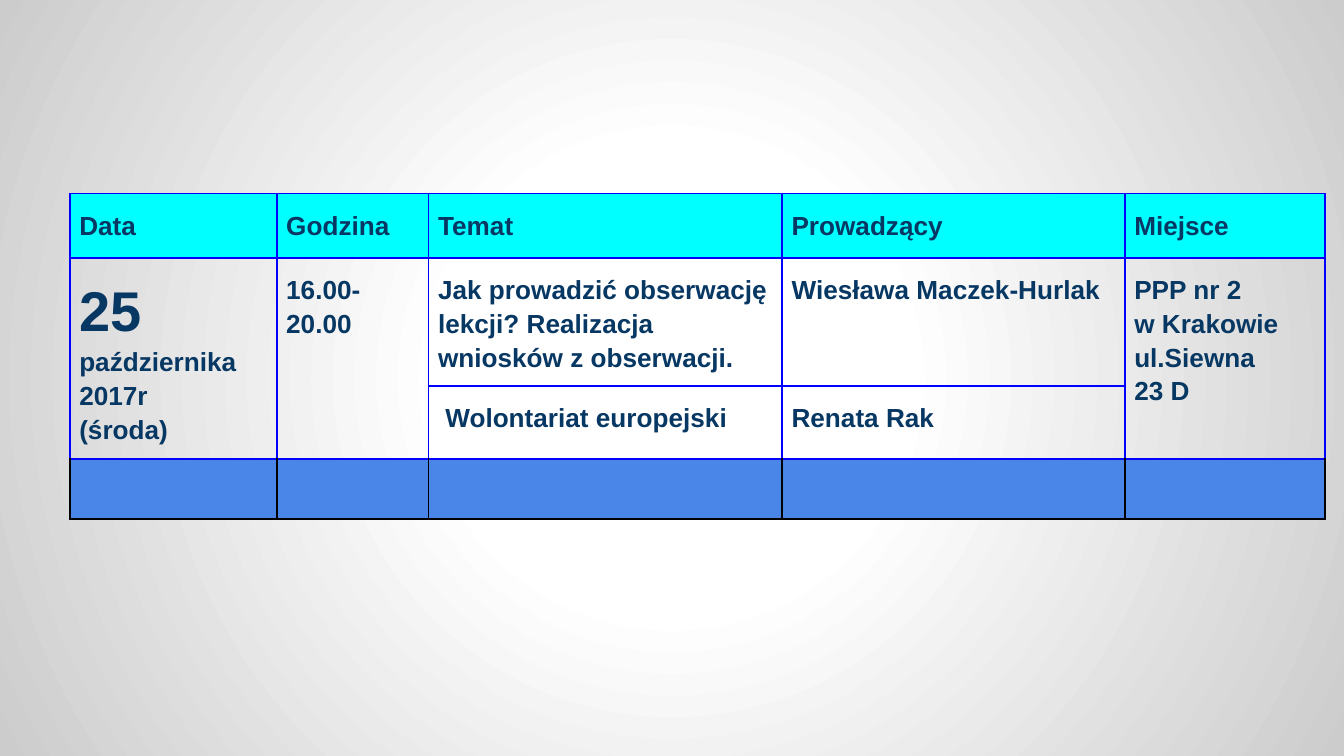
from lxml import etree
from pptx import Presentation
from pptx.dml.color import RGBColor
from pptx.oxml import parse_xml
from pptx.oxml.ns import nsdecls, qn
from pptx.util import Inches, Pt

NAVY = RGBColor(0x07, 0x37, 0x63)
CYAN = RGBColor(0x00, 0xFF, 0xFF)
BLUE = RGBColor(0x4A, 0x86, 0xE8)
LINE_BLUE = RGBColor(0x00, 0x00, 0xFF)
BLACK = RGBColor(0x00, 0x00, 0x00)
WHITE = RGBColor(0xFF, 0xFF, 0xFF)
GREY = RGBColor(0xCC, 0xCC, 0xCC)

COLS = [1.54, 1.13, 2.63, 2.55, 1.49]
ROWS = [0.48, 0.95, 0.54, 0.45]
HEADERS = ["Data", "Godzina", "Temat", "Prowadzący", "Miejsce"]
# Each cell is a list of paragraphs, each paragraph a list of (text, size) runs.
SESSION = [
    [[("25 ", 30), ("października 2017r", 14)], [("(środa)", 14)]],
    [[("16.00-", 14)], [("20.00", 14)]],
    [[("Jak prowadzić obserwację lekcji? Realizacja wniosków z obserwacji.", 14)]],
    [[("Wiesława Maczek-Hurlak", 14)]],
    [[("PPP nr 2", 14)], [("w Krakowie", 14)], [("ul.Siewna", 14)], [("23 D", 14)]],
]
SECOND_TOPIC = {2: " Wolontariat europejski", 3: "Renata Rak"}
MERGED_COLS = (0, 1, 4)


def set_background(s):
    """Radial gradient, white in the centre and grey at the edges."""
    s.background.fill.gradient()
    old = s.element.find(".//" + qn("a:gradFill"))
    stops = "".join(
        f'<a:gs pos="{pos * 1000}"><a:srgbClr val="{color}"/></a:gs>'
        for pos, color in [(0, WHITE), (30, WHITE), (100, GREY)])
    old.getparent().replace(old, parse_xml(
        f'<a:gradFill {nsdecls("a")} rotWithShape="1"><a:gsLst>{stops}</a:gsLst>'
        '<a:path path="circle"><a:fillToRect l="50000" t="50000" r="50000" b="50000"/>'
        '</a:path></a:gradFill>'))


def set_borders(cell, color=LINE_BLUE, top=LINE_BLUE, width=1):
    tc_pr = cell._tc.get_or_add_tcPr()
    for i, side in enumerate("LRTB"):
        ln = etree.Element(qn(f"a:ln{side}"), w=str(Pt(width)))
        fill = etree.SubElement(ln, qn("a:solidFill"))
        etree.SubElement(fill, qn("a:srgbClr"), val=str(top if side == "T" else color))
        tc_pr.insert(i, ln)


def set_text(cell, paragraphs, font="Arial", color=NAVY, bold=True, spacing=1.15):
    cell.margin_left = cell.margin_right = Inches(0.07)
    cell.margin_top = cell.margin_bottom = Inches(0.1)
    tf = cell.text_frame
    for i, runs in enumerate(paragraphs):
        p = tf.paragraphs[0] if i == 0 else tf.add_paragraph()
        p.line_spacing = spacing
        for text, size in runs:
            r = p.add_run()
            r.text = text
            r.font.name = font
            r.font.size = Pt(size)
            r.font.bold = bold
            r.font.color.rgb = color


def add_schedule(s, left, top):
    frame = s.shapes.add_table(len(ROWS), len(COLS), Inches(left), Inches(top),
                               Inches(sum(COLS)), Inches(sum(ROWS)))
    table = frame.table
    table.first_row = table.horz_banding = False
    for col, width in zip(table.columns, COLS):
        col.width = Inches(width)
    for row, height in zip(table.rows, ROWS):
        row.height = Inches(height)

    fills = [CYAN, None, None, BLUE]
    for y, color in enumerate(fills):
        for x in range(len(COLS)):
            cell = table.cell(y, x)
            if color is None:
                cell.fill.background()
            else:
                cell.fill.solid()
                cell.fill.fore_color.rgb = color
            set_borders(cell, BLACK if color == BLUE else LINE_BLUE)

    for x in MERGED_COLS:
        table.cell(1, x).merge(table.cell(2, x))
    for x, (header, paragraphs) in enumerate(zip(HEADERS, SESSION)):
        set_text(table.cell(0, x), [[(header, 14)]])
        set_text(table.cell(1, x), paragraphs)
    for x, text in SECOND_TOPIC.items():
        set_text(table.cell(2, x), [[(text, 14)]])


def main():
    prs = Presentation()
    prs.slide_width = Inches(10)
    prs.slide_height = prs.slide_width * 9 // 16
    s = prs.slides.add_slide(prs.slide_layouts[6])
    set_background(s)
    add_schedule(s, 0.52, 1.44)
    prs.save("out.pptx")


if __name__ == "__main__":
    main()
